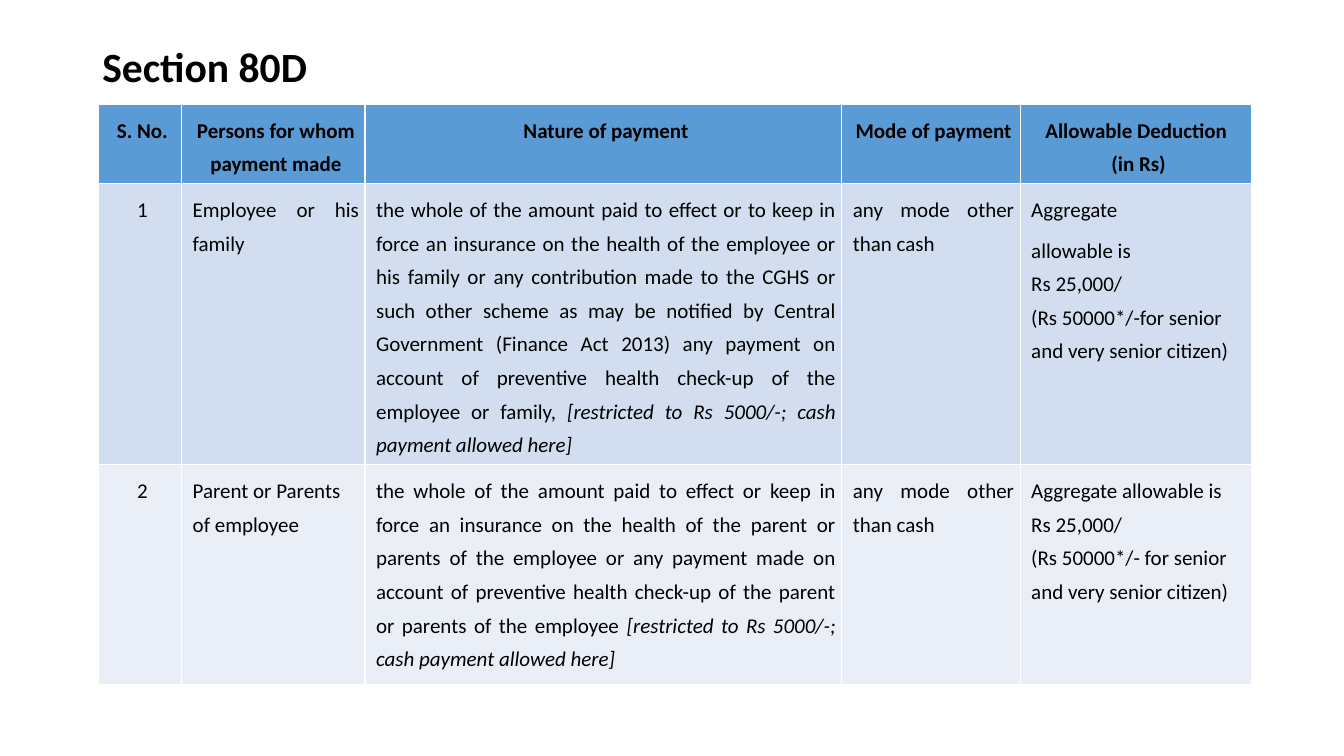
from pptx import Presentation
from pptx.dml.color import RGBColor
from pptx.enum.text import MSO_ANCHOR, PP_ALIGN as Align
from pptx.util import Pt

FONT = "Calibri"
HEADER_FILL, ROW_FILLS = "5B9BD5", ("D2DEEF", "EAEFF7")
COLUMN_WIDTHS = (59.8, 131, 340.6, 127.4, 165.6)
ROW_HEIGHTS = (54.7, 200.9, 157)
HEADINGS = (
    "S. No.",
    "Persons for whom payment made",
    "Nature of payment",
    "Mode of payment",
    "Allowable Deduction \n(in Rs)",
)
CASH_NOTE = "[restricted to Rs 5000/-; cash payment allowed here]"
MODE = "any mode other than cash"
ROWS = (
    (
        (Align.CENTER, ["1"]),
        (Align.JUSTIFY, ["Employee or his family"]),
        (Align.JUSTIFY, [
            "the whole of the amount paid to effect or to keep in force an insurance "
            "on the health of the employee or his family or any contribution made to "
            "the CGHS or such other scheme as may be notified by Central Government "
            "(Finance Act 2013) any payment on account of preventive health check-up "
            "of the employee or family, "], CASH_NOTE),
        (Align.JUSTIFY, [MODE]),
        (Align.LEFT, [
            "Aggregate",
            "allowable is \nRs 25,000/ \n(Rs 50000*/-for senior and very senior citizen)"]),
    ),
    (
        (Align.CENTER, ["2"]),
        (Align.LEFT, ["Parent or Parents of employee"]),
        (Align.JUSTIFY, [
            "the whole of the amount paid to effect or keep in force an insurance on "
            "the health of the parent or parents of the employee or any payment made "
            "on account of preventive health check-up of the parent or parents of the "
            "employee "], CASH_NOTE),
        (Align.JUSTIFY, [MODE]),
        (Align.LEFT, [
            "Aggregate allowable is \nRs 25,000/ \n"
            "(Rs 50000*/- for senior and very senior citizen)"]),
    ),
)


def color(hex_string):
    """Turn a hex string into a colour."""
    return RGBColor.from_string(hex_string)


def set_font(paragraph, size, bold):
    """Give a paragraph the slide's typeface in black."""
    font = paragraph.font
    font.name, font.size, font.bold = FONT, Pt(size), bold
    font.color.rgb = color("000000")


def add_title(slide, text, left, top, width, height):
    """Place the slide heading in its box."""
    shape = slide.shapes.add_textbox(Pt(left), Pt(top), Pt(width), Pt(height))
    frame = shape.text_frame
    frame.word_wrap = True
    frame.vertical_anchor = MSO_ANCHOR.MIDDLE
    paragraph = frame.paragraphs[0]
    paragraph.text = text
    set_font(paragraph, 29.7, True)


def fill_cell(cell, fill, alignment, texts, italic_tail="", bold=False):
    """Fill a table cell with paragraphs and an optional italic ending."""
    cell.fill.solid()
    cell.fill.fore_color.rgb = color(fill)
    cell.margin_left = cell.margin_right = Pt(4.3)
    cell.margin_top = cell.margin_bottom = Pt(4.3)
    frame = cell.text_frame
    for index, text in enumerate(texts):
        paragraph = frame.add_paragraph() if index else frame.paragraphs[0]
        paragraph.text = text
        paragraph.alignment = alignment
        paragraph.line_spacing = Pt(24)
        paragraph.space_after = Pt(5)
        paragraph._p.get_or_add_pPr().set("marL", str(Pt(3.6)))
        set_font(paragraph, 15, bold)
    if italic_tail:
        run = paragraph.add_run()
        run.text = italic_tail
        run.font.italic = True


def add_deductions(slide, left, top):
    """Place the table of deductions from its top left corner."""
    table = slide.shapes.add_table(
        len(ROW_HEIGHTS), len(COLUMN_WIDTHS), Pt(left), Pt(top),
        Pt(sum(COLUMN_WIDTHS)), Pt(sum(ROW_HEIGHTS))).table
    for column, width in zip(table.columns, COLUMN_WIDTHS):
        column.width = Pt(width)
    for row, height in zip(table.rows, ROW_HEIGHTS):
        row.height = Pt(height)
    for column, heading in enumerate(HEADINGS):
        fill_cell(table.cell(0, column), HEADER_FILL, Align.CENTER, [heading], bold=True)
    for row, (contents, fill) in enumerate(zip(ROWS, ROW_FILLS), start=1):
        for column, content in enumerate(contents):
            fill_cell(table.cell(row, column), fill, *content)


def main():
    """Build the slide and save it."""
    presentation = Presentation()
    presentation.slide_width, presentation.slide_height = Pt(960), Pt(540)
    slide = presentation.slides.add_slide(presentation.slide_layouts[6])
    add_title(slide, "Section 80D", 66, 28, 828, 38)
    add_deductions(slide, 70, 74.5)
    presentation.save("out.pptx")


if __name__ == "__main__":
    main()
